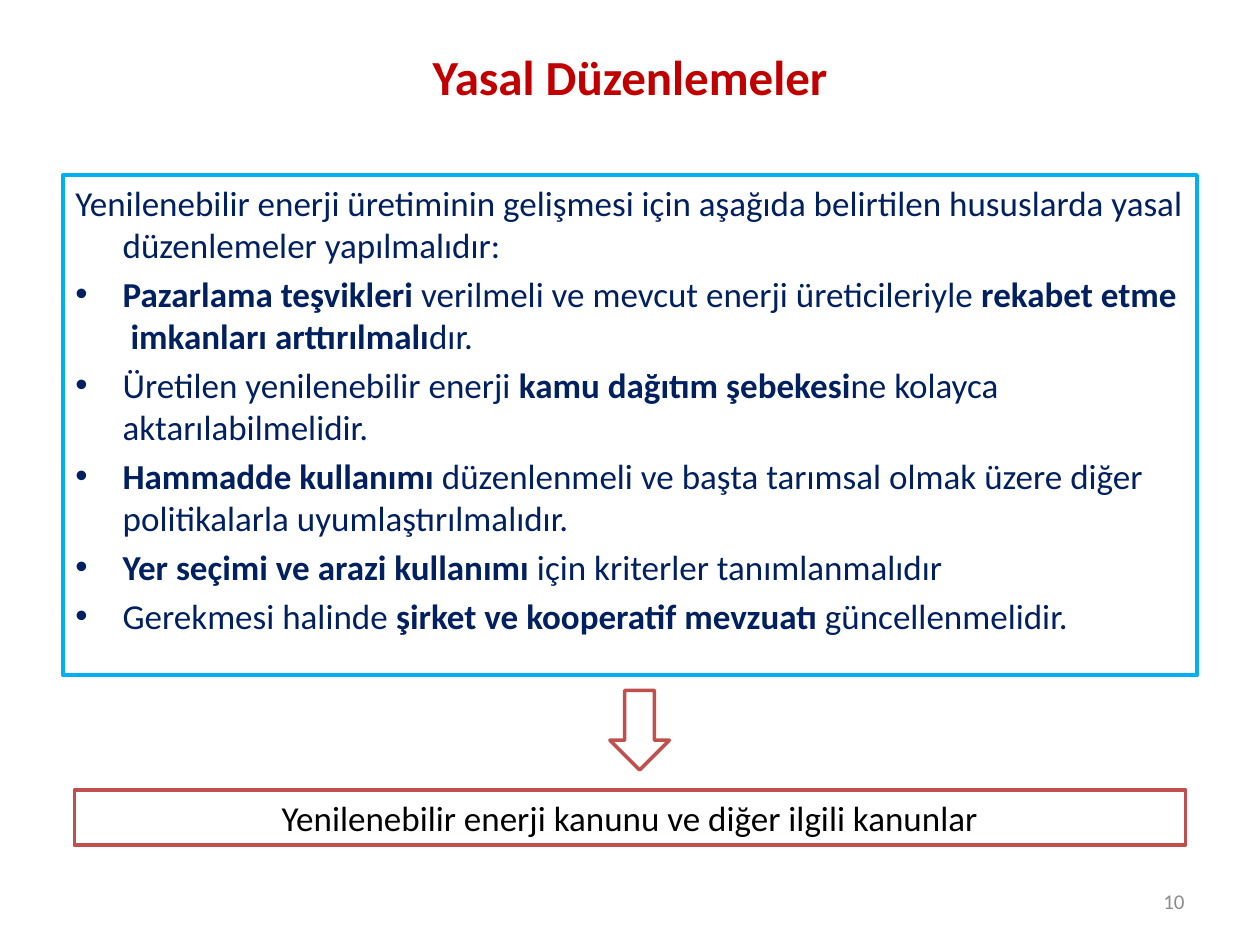
from pptx import Presentation
from pptx.dml.color import RGBColor
from pptx.enum.shapes import MSO_SHAPE
from pptx.enum.text import MSO_ANCHOR, PP_ALIGN
from pptx.oxml.ns import qn
from pptx.util import Pt

RED, NAVY, CYAN, BRICK = "C00000", "002060", "00B0F0", "C0504D"
WHITE, BLACK, GREY = "FFFFFF", "000000", "8C8C8C"

WIDTH, HEIGHT, MARGIN = 720, 540, 36
INDENT = 27

INTRO = [("Yenilenebilir enerji üretiminin gelişmesi için aşağıda belirtilen "
          "hususlarda yasal düzenlemeler yapılmalıdır:", False)]
MEASURES = [
    [("Pazarlama teşvikleri", True),
     (" verilmeli ve mevcut enerji üreticileriyle ", False),
     ("rekabet etme  imkanları arttırılmalı", True),
     ("dır.", False)],
    [("Üretilen yenilenebilir enerji ", False),
     ("kamu dağıtım şebekesi", True),
     ("ne kolayca aktarılabilmelidir.", False)],
    [("Hammadde kullanımı ", True),
     ("düzenlenmeli ve başta tarımsal olmak üzere diğer politikalarla "
      "uyumlaştırılmalıdır.", False)],
    [("Yer seçimi ve arazi kullanımı ", True),
     ("için kriterler tanımlanmalıdır", False)],
    [("Gerekmesi halinde ", False),
     ("şirket ve kooperatif mevzuatı ", True),
     ("güncellenmelidir.", False)],
]


def rgb(value):
    return RGBColor.from_string(value)


class SlideBuilder:
    """Holds the text style and the slide being filled."""

    font_name = "Calibri"

    def __init__(self, slide):
        self.slide = slide

    def shape(self, kind, box, line, weight, fill=None):
        sp = self.slide.shapes.add_shape(kind, *map(Pt, box))
        sp.shadow.inherit = False
        if fill:
            sp.fill.solid()
            sp.fill.fore_color.rgb = rgb(fill)
        else:
            sp.fill.background()
        sp.line.color.rgb = rgb(line)
        sp.line.width = Pt(weight)
        return sp

    def textbox(self, box):
        return self.slide.shapes.add_textbox(*map(Pt, box))

    def frame(self, sp, anchor=MSO_ANCHOR.MIDDLE):
        tf = sp.text_frame
        for name, value in {"word_wrap": True, "vertical_anchor": anchor}.items():
            setattr(tf, name, value)
        return tf

    def runs(self, p, parts, size, color):
        """Add (text, bold) parts to a paragraph."""
        for text, bold in parts:
            r = p.add_run()
            r.text = text
            style = {"name": self.font_name, "size": Pt(size), "bold": bold}
            for name, value in style.items():
                setattr(r.font, name, value)
            r.font.color.rgb = rgb(color)

    def label(self, sp, text, size, color, align=PP_ALIGN.CENTER, bold=False):
        p = self.frame(sp).paragraphs[0]
        p.alignment = align
        self.runs(p, [(text, bold)], size, color)

    def bullet_list(self, sp, intro, items, size, color, gap):
        """Write an unbulleted intro and bulleted items, all with hanging indent."""
        tf = self.frame(sp, MSO_ANCHOR.TOP)
        for i, parts in enumerate([intro, *items]):
            p = tf.add_paragraph() if i else tf.paragraphs[0]
            p.alignment = PP_ALIGN.LEFT
            pPr = p._p.get_or_add_pPr()
            pPr.set("marL", str(Pt(INDENT)))
            pPr.set("indent", str(-Pt(INDENT)))
            if i:
                p.space_before = Pt(gap)
                font = pPr.makeelement(qn("a:buFont"), {"typeface": "Arial"})
                char = pPr.makeelement(qn("a:buChar"), {"char": "•"})
                pPr.extend([font, char])
            self.runs(p, parts, size, color)


def main():
    prs = Presentation()
    prs.slide_width, prs.slide_height = Pt(WIDTH), Pt(HEIGHT)
    s = SlideBuilder(prs.slides.add_slide(prs.slide_layouts[6]))
    content = WIDTH - 2 * MARGIN

    title = s.textbox((MARGIN, 21.6, content, 44))
    s.label(title, "Yasal Düzenlemeler", 28, RED, bold=True)

    measures = s.shape(MSO_SHAPE.RECTANGLE, (MARGIN, 100, content, 286), CYAN, 2.25)
    s.bullet_list(measures, INTRO, MEASURES, 20, NAVY, gap=4)

    number = s.textbox((516, 500.5, 168, 28.75))
    s.label(number, "10", 12, GREY, PP_ALIGN.RIGHT)

    s.shape(MSO_SHAPE.DOWN_ARROW, (348.5, 394.5, 34, 45.5), BRICK, 2, WHITE)

    laws = s.shape(MSO_SHAPE.RECTANGLE, (42.5, 451.5, 635, 31.5), BRICK, 2, WHITE)
    s.label(laws, "Yenilenebilir enerji kanunu ve diğer ilgili kanunlar", 20, BLACK)

    prs.save("out.pptx")


if __name__ == "__main__":
    main()
